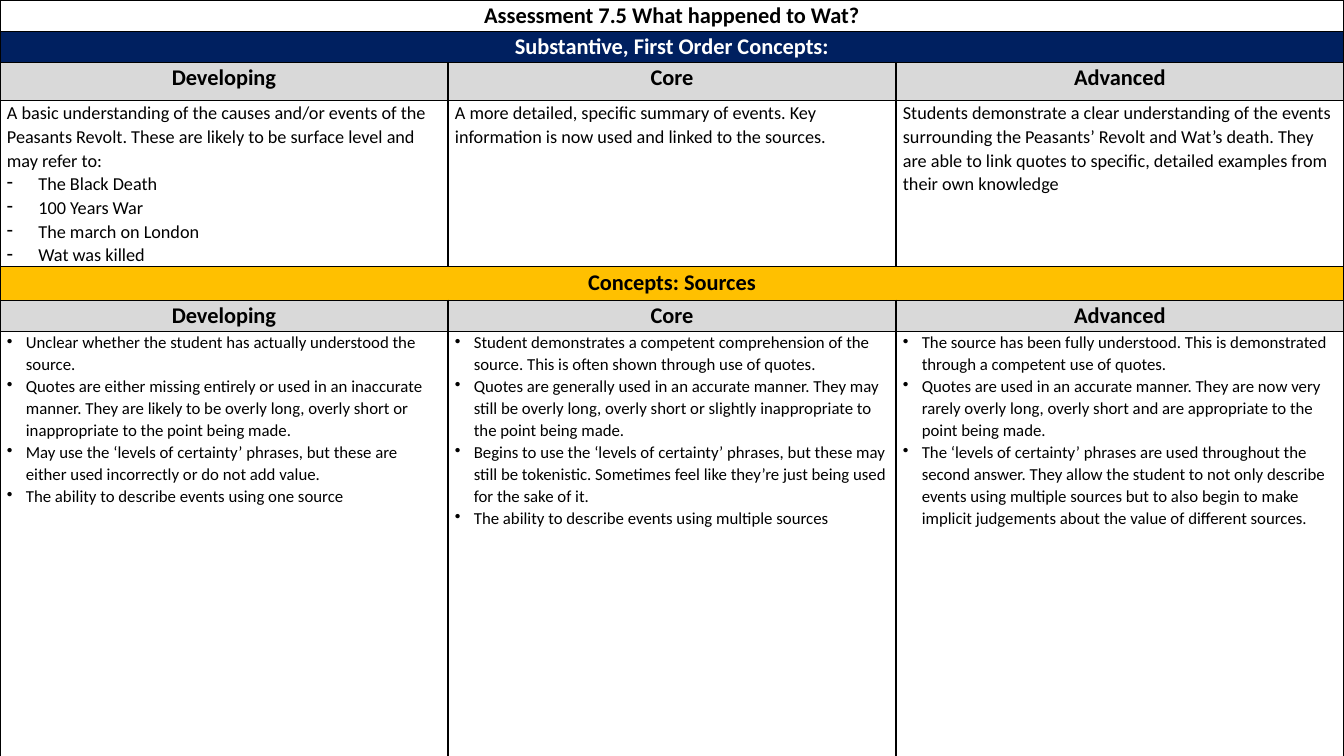
import pptx
import pptx.dml.color
import pptx.enum.text
import pptx.oxml.ns
import pptx.util
from lxml import etree

Pt = pptx.util.Pt
RGBColor = pptx.dml.color.RGBColor
qn = pptx.oxml.ns.qn

BLACK = RGBColor(0x00, 0x00, 0x00)
WHITE = RGBColor(0xFF, 0xFF, 0xFF)
NAVY = RGBColor(0x00, 0x20, 0x60)
AMBER = RGBColor(0xFF, 0xC0, 0x00)
GREY = RGBColor(0xD9, 0xD9, 0xD9)

SLIDE_W, SLIDE_H = 960, 540
ROW_HEIGHTS = [22.3, 22.3, 27.4, 107.3, 23.8, 22.3, 314.6]
LEVELS = ["Developing", "Core", "Advanced"]

KNOWLEDGE = [
    "A basic understanding of the causes and/or events of the Peasants Revolt. "
    "These are likely to be surface level and may refer to:",
    "A more detailed, specific summary of events. Key information is now used "
    "and linked to the sources.",
    "Students demonstrate a clear understanding of the events surrounding the "
    "Peasants’ Revolt and Wat’s death. They are able to link quotes to specific, "
    "detailed examples from their own knowledge",
]
EVENTS = ["The Black Death", "100 Years War", "The march on London", "Wat was killed"]
SOURCES = [
    [
        "Unclear whether the student has actually understood the source.",
        "Quotes are either missing entirely or used in an inaccurate manner. They are "
        "likely to be overly long, overly short or inappropriate to the point being made.",
        "May use the ‘levels of certainty’ phrases, but these are either used "
        "incorrectly or do not add value.",
        "The ability to describe events using one source",
    ],
    [
        "Student demonstrates a competent comprehension of the source. This is often "
        "shown through use of quotes.",
        "Quotes are generally used in an accurate manner. They may still be overly long, "
        "overly short or slightly inappropriate to the point being made.",
        "Begins to use the ‘levels of certainty’ phrases, but these may still be "
        "tokenistic. Sometimes feel like they’re just being used for the sake of it.",
        "The ability to describe events using multiple sources",
    ],
    [
        "The source has been fully understood. This is demonstrated through a competent "
        "use of quotes.",
        "Quotes are used in an accurate manner. They are now very rarely overly long, "
        "overly short and are appropriate to the point being made.",
        "The ‘levels of certainty’ phrases are used throughout the second answer. They "
        "allow the student to not only describe events using multiple sources but to "
        "also begin to make implicit judgements about the value of different sources.",
    ],
]


def add_text(tf, text, size=16, bold=False, color=BLACK, center=False, bullet=None, indent=0):
    """Fill the first paragraph if it is empty, otherwise add another."""
    p = tf.paragraphs[0] if not tf.text else tf.add_paragraph()
    p.alignment = getattr(pptx.enum.text.PP_ALIGN, "CENTER" if center else "LEFT")
    p.line_spacing = 1.07
    r = p.add_run()
    r.text = text
    r.font.name = "Calibri"
    r.font.size = Pt(size)
    r.font.bold = bold
    r.font.color.rgb = color
    if bullet:
        pPr = p._p.get_or_add_pPr()
        pPr.set("marL", str(Pt(indent)))
        pPr.set("indent", str(-Pt(indent)))
        etree.SubElement(pPr, qn("a:buChar"), char=bullet)


def add_borders(cell):
    tcPr = cell._tc.get_or_add_tcPr()
    for side in ("a:lnL", "a:lnR", "a:lnT", "a:lnB"):
        ln = etree.SubElement(tcPr, qn(side), w=str(Pt(1)))
        fill = etree.SubElement(ln, qn("a:solidFill"))
        etree.SubElement(fill, qn("a:srgbClr"), val=str(BLACK))


def add_grid(s):
    frame = s.shapes.add_table(len(ROW_HEIGHTS), len(LEVELS), 0, 0, Pt(SLIDE_W), Pt(SLIDE_H))
    table = frame.table
    table.first_row = table.horz_banding = False
    for col in table.columns:
        col.width = Pt(SLIDE_W / len(LEVELS))
    for row, height in zip(table.rows, ROW_HEIGHTS):
        row.height = Pt(height)
    for cell in table.iter_cells():
        cell.margin_left = cell.margin_right = Pt(5)
        cell.margin_top = cell.margin_bottom = 0
        add_borders(cell)
        cell.fill.background()
    return table


def fill_cell(cell, color):
    cell.fill.solid()
    cell.fill.fore_color.rgb = color


def add_band(table, row, text, fill=WHITE, color=BLACK):
    """Write a heading across the whole row."""
    cell = table.cell(row, 0)
    cell.merge(table.cell(row, len(LEVELS) - 1))
    fill_cell(cell, fill)
    add_text(cell.text_frame, text, bold=True, color=color, center=True)


def add_level_row(table, row):
    for col, level in enumerate(LEVELS):
        fill_cell(table.cell(row, col), GREY)
        add_text(table.cell(row, col).text_frame, level, bold=True, center=True)


def main():
    prs = pptx.Presentation()
    prs.slide_width, prs.slide_height = Pt(SLIDE_W), Pt(SLIDE_H)
    s = prs.slides.add_slide(prs.slide_layouts[6])
    table = add_grid(s)

    add_band(table, 0, "Assessment 7.5 What happened to Wat?")
    add_band(table, 1, "Substantive, First Order Concepts:", fill=NAVY, color=WHITE)
    add_level_row(table, 2)
    for col, text in enumerate(KNOWLEDGE):
        add_text(table.cell(3, col).text_frame, text, size=13)
    for event in EVENTS:
        add_text(table.cell(3, 0).text_frame, event, size=13, bullet="-", indent=22.5)

    add_band(table, 4, "Concepts: Sources", fill=AMBER)
    add_level_row(table, 5)
    for col, points in enumerate(SOURCES):
        for point in points:
            add_text(table.cell(6, col).text_frame, point, size=12, bullet="•", indent=13.5)

    prs.save("out.pptx")


if __name__ == "__main__":
    main()
